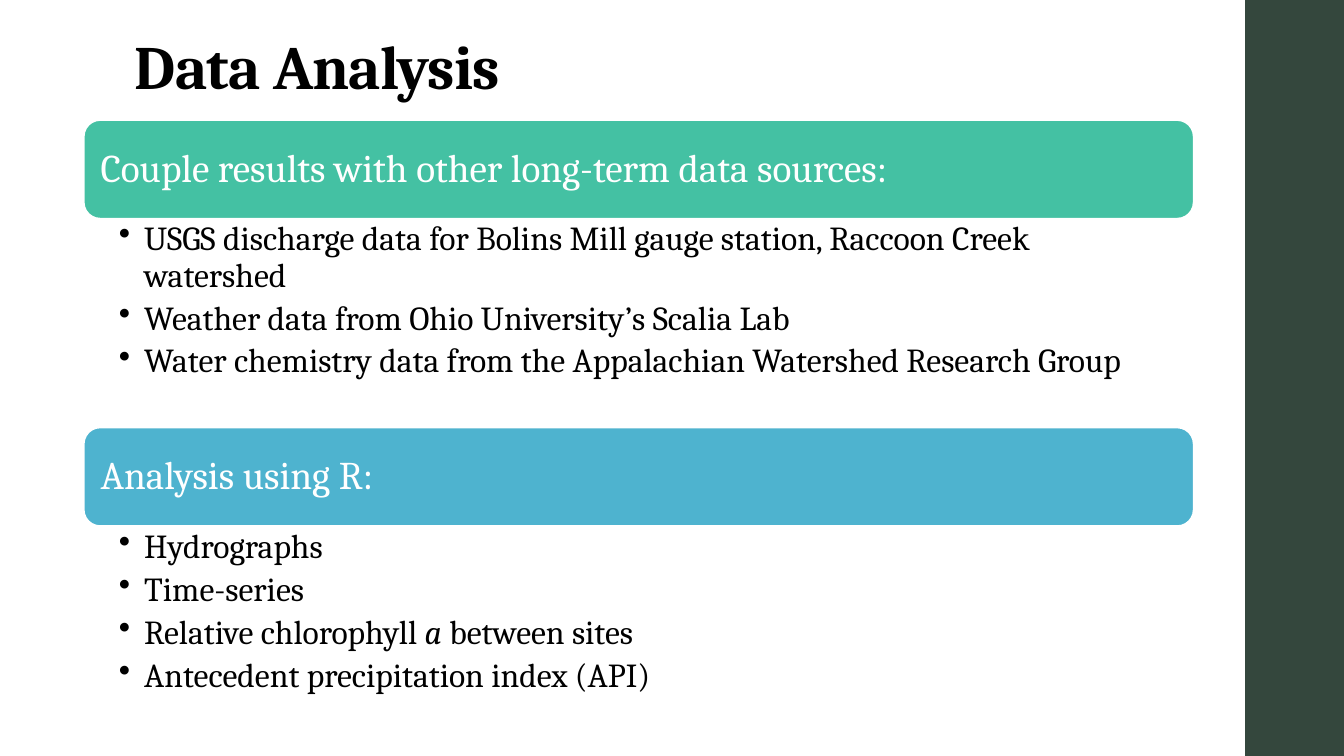
from pptx import Presentation
from pptx.dml.color import RGBColor
from pptx.enum.shapes import MSO_SHAPE as Shape
from pptx.enum.text import MSO_ANCHOR as Anchor, PP_ALIGN as Align
from pptx.oxml.ns import qn
from pptx.util import Inches, Pt
from lxml import etree

FONT = "Cambria"
HEAD = 0.98  # height of a section bar


def color(code):
    return RGBColor.from_string(code)


def style(par, size, code, after=0, bold=None):
    par.alignment = Align.LEFT
    par.line_spacing = 0.9
    par.space_before = Pt(0)
    par.space_after = Pt(after)
    font = par.font
    font.name, font.size, font.bold = FONT, Pt(size), bold
    font.color.rgb = color(code)


def block(slide, kind, box, fill):
    shape = slide.shapes.add_shape(kind, *map(Inches, box))
    shape.shadow.inherit = False
    shape.fill.solid()
    shape.fill.fore_color.rgb = color(fill)
    shape.line.fill.background()
    return shape


def frame(shape, anchor, left, top, right, bottom):
    text = shape.text_frame
    text.word_wrap = True
    text.vertical_anchor = anchor
    text.margin_left, text.margin_top = Inches(left), Inches(top)
    text.margin_right, text.margin_bottom = Inches(right), Inches(bottom)
    return text


def title(slide, box, words):
    shape = slide.shapes.add_textbox(*map(Inches, box))
    par = frame(shape, Anchor.BOTTOM, 0.1, 0.05, 0.1, 0.05).paragraphs[0]
    run = par.add_run()
    run.text = words
    run._r.get_or_add_rPr().set("spc", "-50")
    style(par, 44, "000000", bold=True)


def bullet(par):
    props = par._p.get_or_add_pPr()
    props.set("marL", str(Inches(0.25)))
    props.set("indent", str(Inches(-0.25)))
    etree.SubElement(props, qn("a:buChar")).set("char", "•")


def section(slide, box, fill, heading, items):
    left, top, width, height = box

    # Section bar
    bar = block(slide, Shape.ROUNDED_RECTANGLE, (left, top, width, HEAD), fill)
    bar.line.color.rgb = color("FFFFFF")
    bar.line.width = Pt(1.35)
    par = frame(bar, Anchor.MIDDLE, 0.12, 0.12, 0.12, 0.12).paragraphs[0]
    par.text = heading
    style(par, 28, "FFFFFF")

    # Bulleted list; each item is a list of runs, every second one italic
    body = (left, top + HEAD, width, height - HEAD)
    shape = slide.shapes.add_textbox(*map(Inches, body))
    text = frame(shape, Anchor.TOP, 0.35, 0.03, 0.19, 0.03)
    for i, parts in enumerate(items):
        par = text.add_paragraph() if i else text.paragraphs[0]
        bullet(par)
        for k, part in enumerate(parts):
            run = par.add_run()
            run.text = part
            if k % 2:
                run.font.italic = True
        style(par, 24, "000000", after=4.8)


def main():
    deck = Presentation()
    deck.slide_width, deck.slide_height = Inches(13.33), Inches(7.5)
    slide = deck.slides.add_slide(deck.slide_layouts[6])

    # Side band and title
    block(slide, Shape.RECTANGLE, (12.35, 0, 0.98, 7.5), "34473D")
    title(slide, (1.24, 0, 10.6, 1.07), "Data Analysis")

    # Sections
    section(slide, (0.83, 1.19, 11.01, 3.04), "44C1A3",
            "Couple results with other long-term data sources:", [
                ["USGS discharge data for Bolins Mill gauge station, "
                 "Raccoon Creek watershed"],
                ["Weather data from Ohio University’s Scalia Lab"],
                ["Water chemistry data from the Appalachian Watershed "
                 "Research Group"],
            ])
    section(slide, (0.83, 4.24, 11.01, 2.77), "4EB3CF",
            "Analysis using R:", [
                ["Hydrographs"],
                ["Time-series"],
                ["Relative chlorophyll ", "a", " between sites"],
                ["Antecedent precipitation index (API)"],
            ])
    deck.save("out.pptx")


if __name__ == "__main__":
    main()
